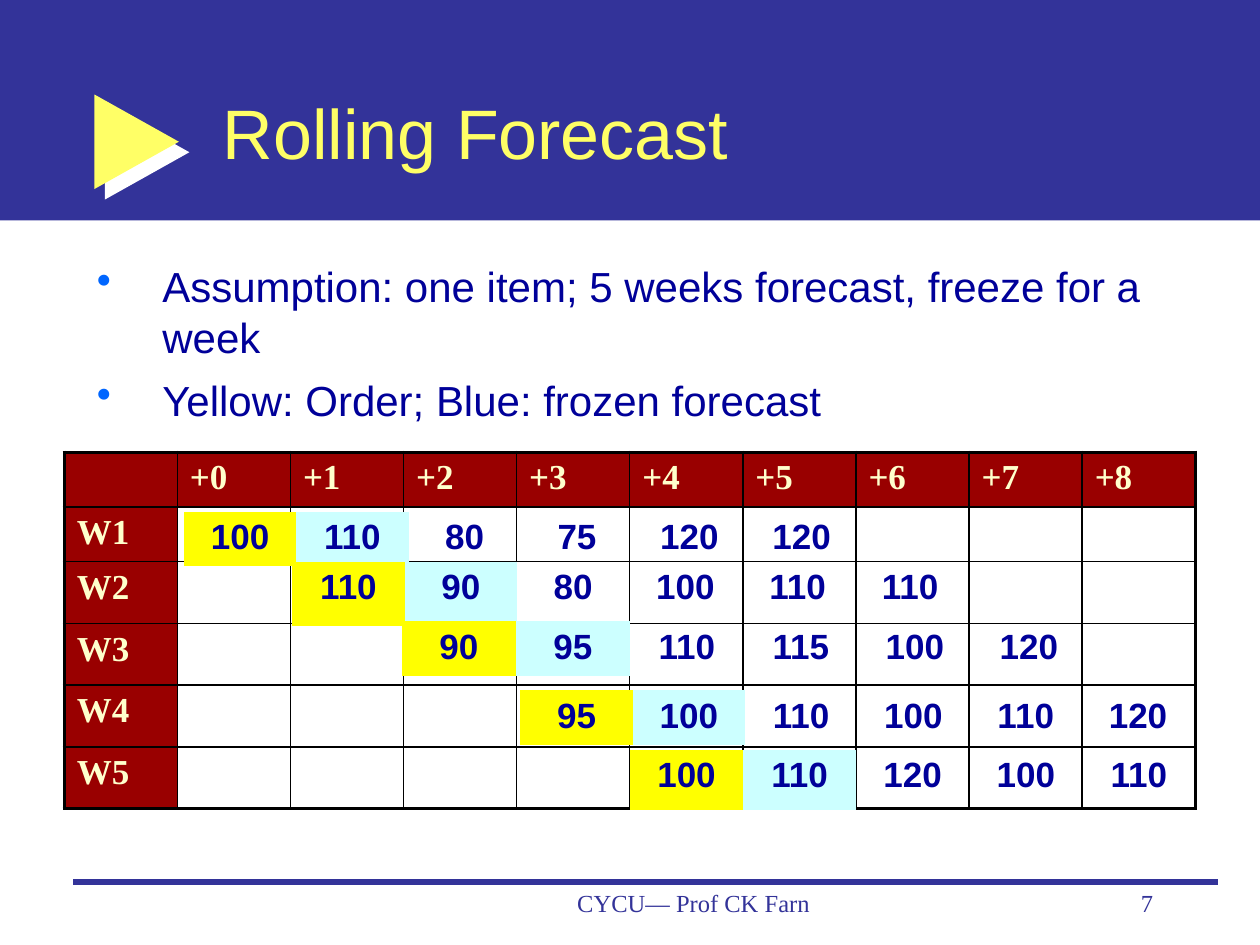
from lxml import etree
from pptx import Presentation
from pptx.dml.color import RGBColor
from pptx.enum.shapes import MSO_CONNECTOR, MSO_SHAPE
from pptx.enum.text import MSO_ANCHOR, PP_ALIGN
from pptx.oxml.ns import qn
from pptx.util import Inches, Pt

LEFT, CENTER, RIGHT = PP_ALIGN.LEFT, PP_ALIGN.CENTER, PP_ALIGN.RIGHT
TOP, MIDDLE = MSO_ANCHOR.TOP, MSO_ANCHOR.MIDDLE
SANS, SERIF = "Arial", "Times New Roman"
INDIGO, NAVY, LEMON, BLACK = "333399", "000099", "FFFF66", "000000"
MAROON, CREAM, ORDER, FROZEN = "990000", "FFFFCC", "FFFF00", "CCFFFF"
BULLET, WHITE = "0066FF", "FFFFFF"

# Content
TITLE = "Rolling Forecast"
POINTS = ["Assumption: one item; 5 weeks forecast, freeze for a week",
          "Yellow: Order; Blue: frozen forecast"]
OFFSETS = [""] + [f"+{week}" for week in range(9)]
WEEKS = [f"W{week}" for week in range(1, 6)]
GRID_BOX = (0.51, 3.59, 8.98)
GRID_HEIGHTS = [0.43, 0.43, 0.49, 0.49, 0.49, 0.49]
# Left, top, width, height and values of each week's forecast
FORECASTS = [
    (1.46, 4.06, 5.35, 0.43, [100, 110, 80, 75, 120, 120]),
    (2.32, 4.46, 5.35, 0.51, [110, 90, 80, 100, 110, 110]),
    (3.19, 4.93, 5.43, 0.43, [90, 95, 110, 115, 100, 120]),
    (4.13, 5.48, 5.35, 0.43, [95, 100, 110, 100, 110, 120]),
    (5, 5.95, 4.49, 0.48, [100, 110, 120, 100, 110]),
]


def color(value):
    return RGBColor.from_string(value)


def add_element(parent, tag, **attributes):
    element = etree.SubElement(parent, qn(tag))
    for name, value in attributes.items():
        element.set(name, str(value))
    return element


def add_bullet(para):
    properties = para._p.get_or_add_pPr()
    properties.set("marL", str(Inches(0.52)))
    properties.set("indent", str(-Inches(0.52)))
    tint = add_element(properties, "a:buClr")
    add_element(tint, "a:srgbClr", val=BULLET)
    add_element(properties, "a:buChar", char="•")


def write(frame, texts, size=20, font=SANS, ink=NAVY, bold=False,
          align=LEFT, anchor=TOP, bullets=False):
    frame.word_wrap = True
    frame.vertical_anchor = anchor
    for index, text in enumerate(texts):
        para = frame.paragraphs[0] if index == 0 else frame.add_paragraph()
        if bullets:
            add_bullet(para)
        if index:
            para.space_before = Pt(size * 0.3)
        para.alignment = align
        span = para.add_run()
        span.text = text
        span.font.size, span.font.name = Pt(size), font
        span.font.bold, span.font.color.rgb = bold, color(ink)


def add_text(page, place, texts, **style):
    box = page.shapes.add_textbox(*map(Inches, place))
    write(box.text_frame, texts, **style)


def set_borders(cell, widths):
    """Widths in points for left, right, top and bottom; 0 means no line."""
    properties = cell._tc.get_or_add_tcPr()
    for side, width in zip("LRTB", widths):
        line = add_element(properties, f"a:ln{side}", w=Pt(width))
        if width:
            solid = add_element(line, "a:solidFill")
            add_element(solid, "a:srgbClr", val=BLACK)
        else:
            add_element(line, "a:noFill")


def add_plain_table(page, left, top, width, heights, columns):
    frame = page.shapes.add_table(len(heights), columns, *map(
        Inches, (left, top, width, sum(heights))))
    table = frame.table
    table.first_row = table.horz_banding = False
    for column in table.columns:
        column.width = Inches(width / columns)
    for row, height in zip(table.rows, heights):
        row.height = Inches(height)
    return table


def fill_cell(cell, fill):
    if fill:
        cell.fill.solid()
        cell.fill.fore_color.rgb = color(fill)
    else:
        cell.fill.background()


def add_solid(page, kind, place, fill):
    shape = page.shapes.add_shape(kind, *map(Inches, place))
    shape.shadow.inherit = False
    shape.fill.solid()
    shape.fill.fore_color.rgb = color(fill)
    shape.line.fill.background()
    return shape


def add_frame(page):
    # Title band, pointer with a hard white shadow, and footer rule
    add_solid(page, MSO_SHAPE.RECTANGLE, (0, 0, 10, 1.75), INDIGO)
    pointer = add_solid(page, MSO_SHAPE.RIGHT_ARROW,
                        (0.75, 0.75, 0.67, 0.75), LEMON)
    pointer.adjustments[0], pointer.adjustments[1] = 0.38, 1
    effects = pointer._element.spPr.find(qn("a:effectLst"))
    shadow = add_element(effects, "a:outerShdw", dist=Pt(8.5),
                         dir=45 * 60000, algn="ctr", rotWithShape=0)
    add_element(shadow, "a:srgbClr", val=WHITE)

    rule = page.shapes.add_connector(MSO_CONNECTOR.STRAIGHT, *map(
        Inches, (0.58, 7, 9.67, 7)))
    rule.line.color.rgb, rule.line.width = color(INDIGO), Pt(3)
    add_element(rule._element.spPr, "a:effectLst")


def add_grid(page):
    # Empty week-by-offset grid with header row and column
    rows, columns = len(GRID_HEIGHTS), len(OFFSETS)
    grid = add_plain_table(page, *GRID_BOX, GRID_HEIGHTS, columns)
    for row in range(rows):
        for column in range(columns):
            cell = grid.cell(row, column)
            edges = (column == 0, column == columns - 1,
                     row == 0, row == rows - 1)
            set_borders(cell, [2.25 if edge else 1 for edge in edges])
            header = row == 0 or column == 0
            fill_cell(cell, MAROON if header else None)
            label = OFFSETS[column] if row == 0 else WEEKS[row - 1]
            if header and label:
                write(cell.text_frame, [label], font=SERIF, ink=CREAM,
                      bold=True)


def add_forecast(page, left, top, width, height, values):
    # One week's strip: order, frozen forecast, then open forecast
    strip = add_plain_table(page, left, top, width, [height], len(values))
    fills = [ORDER, FROZEN] + [None] * (len(values) - 2)
    for cell, value, fill in zip(strip.rows[0].cells, values, fills):
        set_borders(cell, [0] * 4)
        fill_cell(cell, fill)
        write(cell.text_frame, [str(value)], bold=True, align=CENTER)


def main():
    deck = Presentation()
    deck.slide_width, deck.slide_height = Inches(10), Inches(7.5)
    page = deck.slides.add_slide(deck.slide_layouts[6])

    add_frame(page)
    add_text(page, (1.67, 0.42, 7.58, 1.25), [TITLE], size=40, ink=LEMON,
             anchor=MIDDLE)
    add_grid(page)
    add_text(page, (0.67, 2.02, 8.9, 1.1), POINTS, size=24, bullets=True)
    for forecast in FORECASTS:
        add_forecast(page, *forecast)

    # Footer
    footer = {"size": 14, "font": SERIF, "ink": INDIGO}
    add_text(page, (3.92, 7, 3.17, 0.5), ["CYCU— Prof CK Farn"],
             align=CENTER, **footer)
    add_text(page, (7.17, 7, 2.08, 0.5), ["7"], align=RIGHT, **footer)

    deck.save("out.pptx")


if __name__ == "__main__":
    main()
